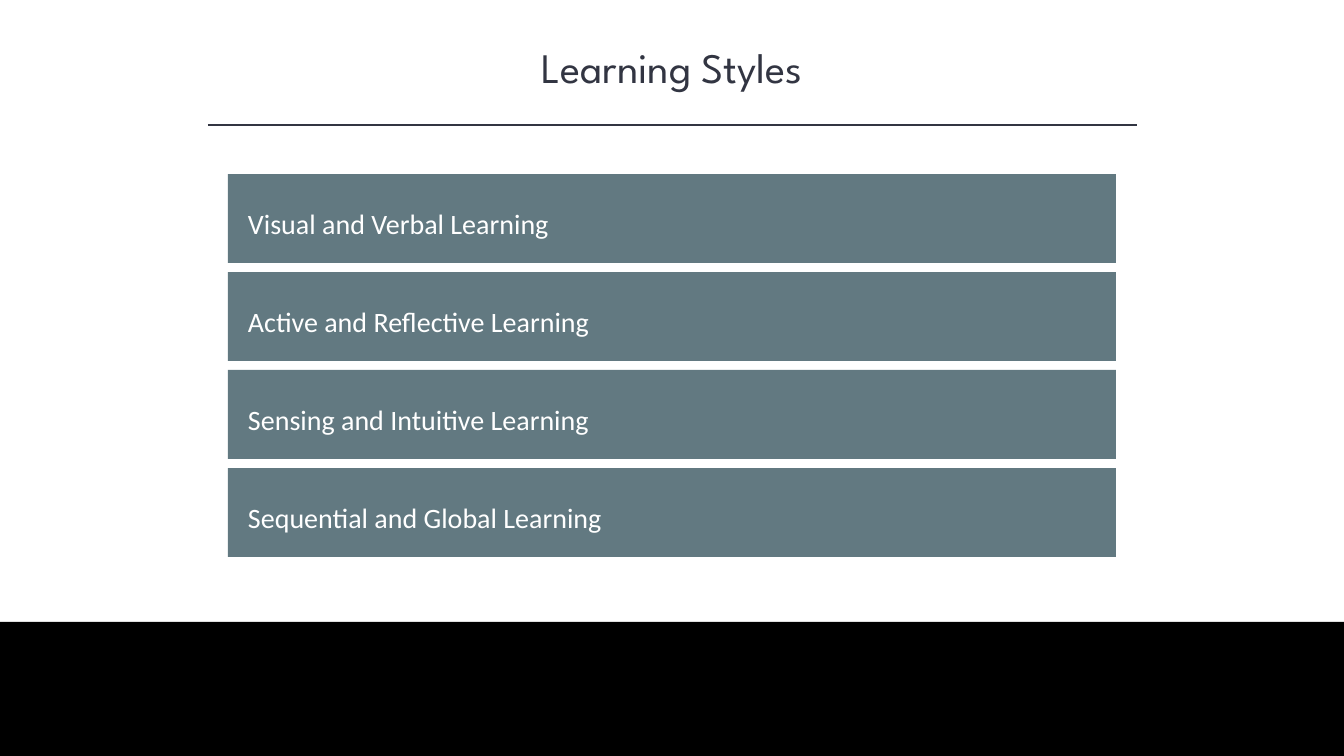
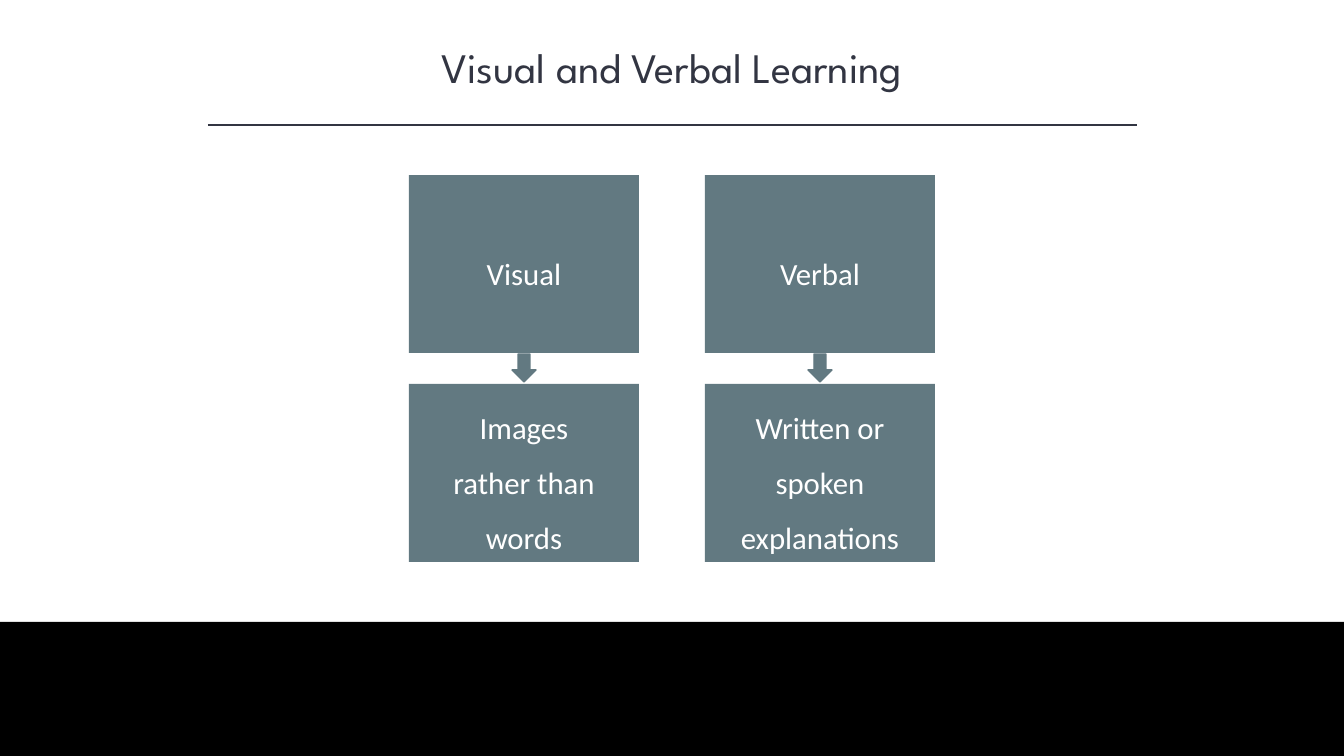
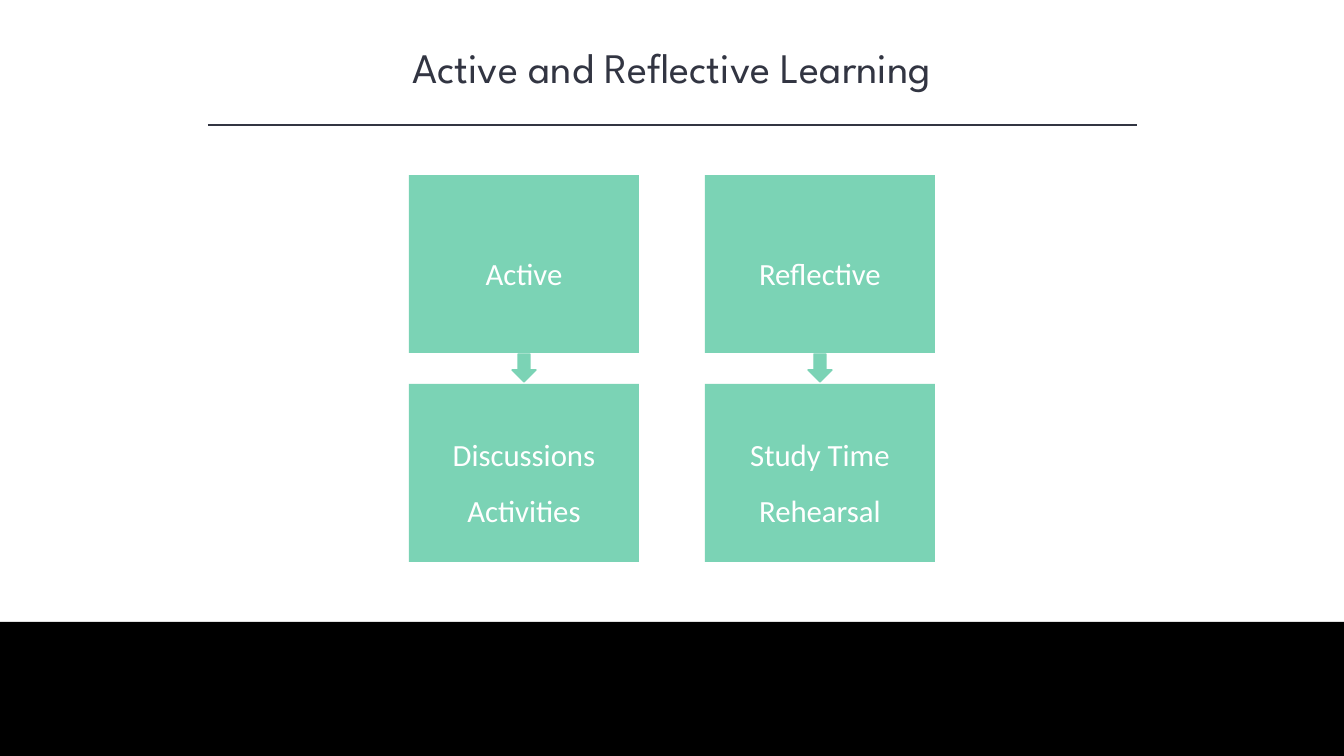
from lxml import etree
from pptx import Presentation
from pptx.dml.color import RGBColor
from pptx.enum.shapes import MSO_CONNECTOR as Connector, MSO_SHAPE as Shape
from pptx.enum.text import MSO_ANCHOR as Anchor, MSO_AUTO_SIZE as AutoSize, PP_ALIGN as Align
from pptx.oxml.ns import qn
from pptx.util import Emu, Pt

PAGE_W, PAGE_H = 1344, 756
EMU_PER_PX = 12192000 / PAGE_W

INK = RGBColor(0x32, 0x35, 0x42)
SLATE = RGBColor(0x62, 0x79, 0x81)
MINT = RGBColor(0x7B, 0xD3, 0xB5)
WHITE = RGBColor(0xFF, 0xFF, 0xFF)
BLACK = RGBColor(0x00, 0x00, 0x00)

TITLE_FONT = "League Spartan"
BODY_FONT = "Calibri"
TITLE_ONLY = 5

BAND_H = 134
BAR_LEFT, BAR_TOP, BAR_W, BAR_H, BAR_GAP = 228, 174, 888, 89, 9
CARD_LEFT, CARD_TOP, CARD_W, CARD_H = 409, 175, 230, 178
COLUMN_GAP, ROW_GAP = 66, 31
ARROW_W, ARROW_H = 24, 28

STYLES = [
    "Visual and Verbal Learning",
    "Active and Reflective Learning",
    "Sensing and Intuitive Learning",
    "Sequential and Global Learning",
]


def px(length):
    return Emu(round(length * EMU_PER_PX))


def write_text(frame, text, *, size, font=BODY_FONT, color=WHITE, align=Align.CENTER,
               anchor=Anchor.MIDDLE, spacing=1.0, insets=(10, 5, 10, 5)):
    """Fill a text frame, one paragraph a line; insets are left, top, right, bottom."""
    frame.text = text
    frame.word_wrap = True
    frame.auto_size = AutoSize.NONE
    frame.vertical_anchor = anchor
    (frame.margin_left, frame.margin_top,
     frame.margin_right, frame.margin_bottom) = map(px, insets)
    for para in frame.paragraphs:
        para.alignment = align
        para.line_spacing = spacing
        for span in para.runs:
            span.font.size = Pt(size)
            span.font.name = font
            span.font.color.rgb = color


def add_block(page, left, top, width, height, color, kind=Shape.RECTANGLE):
    """Add a flat preset shape without an outline."""
    block = page.shapes.add_shape(kind, px(left), px(top), px(width), px(height))
    block.shadow.inherit = False
    block.fill.solid()
    block.fill.fore_color.rgb = color
    block.line.fill.background()
    return block


def add_rule(page, left, right, y):
    rule = page.shapes.add_connector(Connector.STRAIGHT, px(left), px(y), px(right), px(y))
    rule.line.color.rgb = INK
    rule.line.width = Pt(1)
    etree.SubElement(rule._element.spPr, qn("a:effectLst"))


def add_page(deck, heading):
    """Add a slide with the shared title, rule and bottom band."""
    page = deck.slides.add_slide(deck.slide_layouts[TITLE_ONLY])
    title = page.shapes.title
    title.left, title.top, title.width, title.height = map(px, (168, 37, 1008, 61))
    write_text(title.text_frame, heading, size=30, font=TITLE_FONT, color=INK,
               anchor=Anchor.TOP)
    add_rule(page, 208, 1137, 125)
    add_block(page, 0, PAGE_H - BAND_H, PAGE_W, BAND_H, BLACK)
    return page


def add_bars(page, labels):
    for row, label in enumerate(labels):
        top = BAR_TOP + row * (BAR_H + BAR_GAP)
        bar = add_block(page, BAR_LEFT, top, BAR_W, BAR_H, SLATE)
        write_text(bar.text_frame, label, size=20, align=Align.LEFT,
                   insets=(20, 10, 20, 0))


def add_card(page, left, top, text, color):
    card = add_block(page, left, top, CARD_W, CARD_H, color)
    write_text(card.text_frame, text, size=22, spacing=1.5, insets=(33, 0, 33, 0))


def add_arrow(page, left, top, color):
    arrow = add_block(page, left, top, ARROW_W, ARROW_H, color, Shape.DOWN_ARROW)
    arrow.line.color.rgb = color
    arrow.line.width = Pt(1)


def add_columns(page, columns, color):
    """Draw each (style, preference) pair as two cards joined by an arrow."""
    for index, (style, preference) in enumerate(columns):
        left = CARD_LEFT + index * (CARD_W + COLUMN_GAP)
        add_card(page, left, CARD_TOP, style, color)
        add_card(page, left, CARD_TOP + CARD_H + ROW_GAP, preference, color)
        add_arrow(page, left + (CARD_W - ARROW_W) // 2, CARD_TOP + CARD_H + 1, color)


def main():
    deck = Presentation()
    deck.slide_width, deck.slide_height = px(PAGE_W), px(PAGE_H)

    add_bars(add_page(deck, "Learning Styles"), STYLES)
    add_columns(add_page(deck, STYLES[0]), [
        ("Visual", "Images rather than words"),
        ("Verbal", "Written or spoken explanations"),
    ], SLATE)
    add_columns(add_page(deck, STYLES[1]), [
        ("Active", "Discussions\nActivities"),
        ("Reflective", "Study Time\nRehearsal"),
    ], MINT)

    deck.save("out.pptx")


if __name__ == "__main__":
    main()
